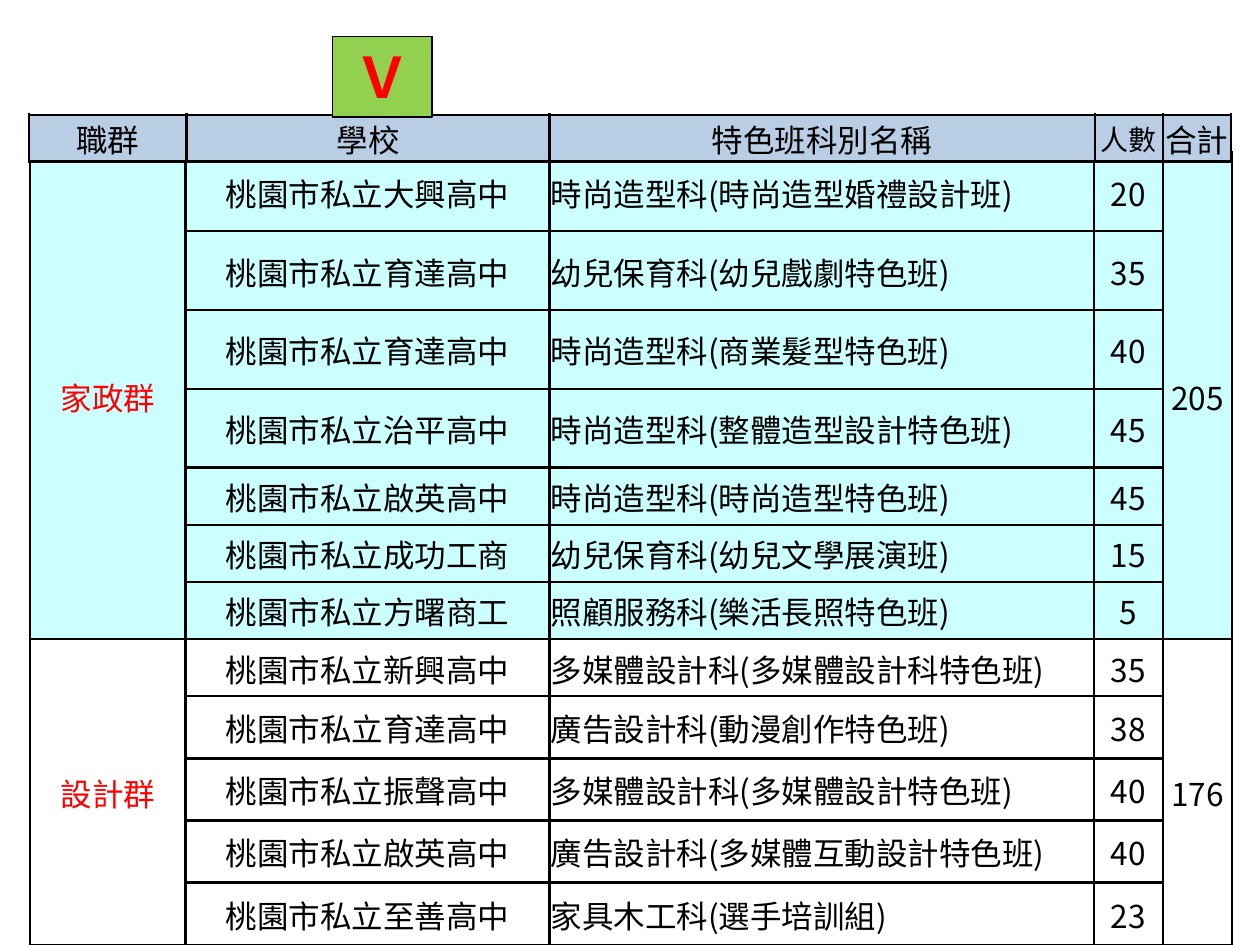
import pptx
import pptx.util
import pptx.dml.color
import pptx.enum.shapes
import pptx.enum.text
import pptx.oxml.ns
from dataclasses import dataclass
from lxml import etree

Pt = pptx.util.Pt
RGB = pptx.dml.color.RGBColor.from_string
ALIGN = pptx.enum.text.PP_ALIGN
ANCHOR = pptx.enum.text.MSO_ANCHOR
qn = pptx.oxml.ns.qn


@dataclass(frozen=True)
class Theme:
    ink: str = "000000"
    accent: str = "FF0000"
    header: str = "B9CDE5"
    home: str = "CCFFFF"
    design: str = "FFFFFF"
    badge: str = "92D050"
    body_font: str = "Noto Sans CJK SC"
    badge_font: str = "Noto Sans CJK TC"
    body_size: float = 18
    small_size: float = 16
    badge_size: float = 32
    border: float = 1.5
    inset: float = 0.72


T = Theme()

HEADINGS = ["職群", "學校", "特色班科別名稱", "人數", "合計"]
GROUPS = [
    ("家政群", 205, T.home, [
        ("桃園市私立大興高中", "時尚造型科(時尚造型婚禮設計班)", 20, 45),
        ("桃園市私立育達高中", "幼兒保育科(幼兒戲劇特色班)", 35, 45),
        ("桃園市私立育達高中", "時尚造型科(商業髮型特色班)", 40, 45),
        ("桃園市私立治平高中", "時尚造型科(整體造型設計特色班)", 45, 45),
        ("桃園市私立啟英高中", "時尚造型科(時尚造型特色班)", 45, 32.7),
        ("桃園市私立成功工商", "幼兒保育科(幼兒文學展演班)", 15, 32.7),
        ("桃園市私立方曙商工", "照顧服務科(樂活長照特色班)", 5, 32.7),
    ]),
    ("設計群", 176, T.design, [
        ("桃園市私立新興高中", "多媒體設計科(多媒體設計科特色班)", 35, 32.7),
        ("桃園市私立育達高中", "廣告設計科(動漫創作特色班)", 38, 35.5),
        ("桃園市私立振聲高中", "多媒體設計科(多媒體設計特色班)", 40, 35.5),
        ("桃園市私立啟英高中", "廣告設計科(多媒體互動設計特色班)", 40, 35.5),
        ("桃園市私立至善高中", "家具木工科(選手培訓組)", 23, 35.5),
    ]),
]


def add_text(tf, text, size, font, color, align=ALIGN.CENTER, bold=None):
    p = tf.paragraphs[0]
    p.alignment = align
    r = p.add_run()
    r.text = text
    r.font.size = Pt(size)
    r.font.name = font
    r.font.bold = bold
    r.font.color.rgb = RGB(color)
    etree.SubElement(r.font._element, qn("a:ea"), typeface=font)


def style_cell(cell, fill):
    cell.margin_left = cell.margin_right = cell.margin_top = Pt(T.inset)
    cell.margin_bottom = 0
    cell.vertical_anchor = ANCHOR.MIDDLE
    cell.fill.solid()
    cell.fill.fore_color.rgb = RGB(fill)
    tcPr = cell._tc.get_or_add_tcPr()
    for i, side in enumerate(("lnL", "lnR", "lnT", "lnB")):
        ln = etree.Element(qn("a:" + side), w=str(Pt(T.border)))
        solid = etree.SubElement(ln, qn("a:solidFill"))
        etree.SubElement(solid, qn("a:srgbClr"), val=T.ink)
        tcPr.insert(i, ln)


def fill_cell(cell, text, color=T.ink, size=T.body_size, align=ALIGN.CENTER):
    add_text(cell.text_frame, str(text), size, T.body_font, color, align)


def add_grid(s, x, y, widths, heights):
    table = s.shapes.add_table(len(heights), len(widths), Pt(x), Pt(y),
                               Pt(sum(widths)), Pt(sum(heights))).table
    table.first_row = table.horz_banding = False
    for column, width in zip(table.columns, widths):
        column.width = Pt(width)
    for row, height in zip(table.rows, heights):
        row.height = Pt(height)
    return table


def add_class_table(s, x, y, widths):
    heights = [row[-1] for group in GROUPS for row in group[-1]]
    table = add_grid(s, x, y, widths, heights)
    top = 0
    for name, total, fill, rows in GROUPS:
        last = top + len(rows) - 1
        for i, (school, course, count, _) in enumerate(rows, top):
            for cell in table.rows[i].cells:
                style_cell(cell, fill)
            fill_cell(table.cell(i, 1), school)
            fill_cell(table.cell(i, 2), course, align=ALIGN.LEFT)
            fill_cell(table.cell(i, 3), count)
        for col, text, color in ((0, name, T.accent), (4, total, T.ink)):
            table.cell(top, col).merge(table.cell(last, col))
            fill_cell(table.cell(top, col), text, color)
        top = last + 1


def add_header_table(s, x, y, widths, height):
    table = add_grid(s, x, y, widths, [height])
    for cell, text in zip(table.rows[0].cells, HEADINGS):
        style_cell(cell, T.header)
        fill_cell(cell, text, size=T.small_size if text == "人數" else T.body_size)


def add_badge(s, x, y, w, h):
    sp = s.shapes.add_shape(pptx.enum.shapes.MSO_SHAPE.RECTANGLE,
                            Pt(x), Pt(y), Pt(w), Pt(h))
    sp.shadow.inherit = False
    sp.fill.solid()
    sp.fill.fore_color.rgb = RGB(T.badge)
    sp.line.color.rgb = RGB(T.ink)
    sp.line.width = Pt(1)
    tf = sp.text_frame
    tf.word_wrap = True
    tf.vertical_anchor = ANCHOR.TOP
    add_text(tf, "Ｖ", T.badge_size, T.badge_font, T.accent, bold=True)


def main():
    prs = pptx.Presentation()
    prs.slide_width, prs.slide_height = Pt(720), Pt(540)
    s = prs.slides.add_slide(prs.slide_layouts[6])
    add_class_table(s, 17.3, 87.2, [88.8, 208, 311, 39.5, 39.5])
    add_header_table(s, 16.6, 65.5, [90, 207.4, 311.6, 38.9, 38.9], 22.3)
    add_badge(s, 190, 20.9, 57, 46)
    prs.save("out.pptx")


if __name__ == "__main__":
    main()
